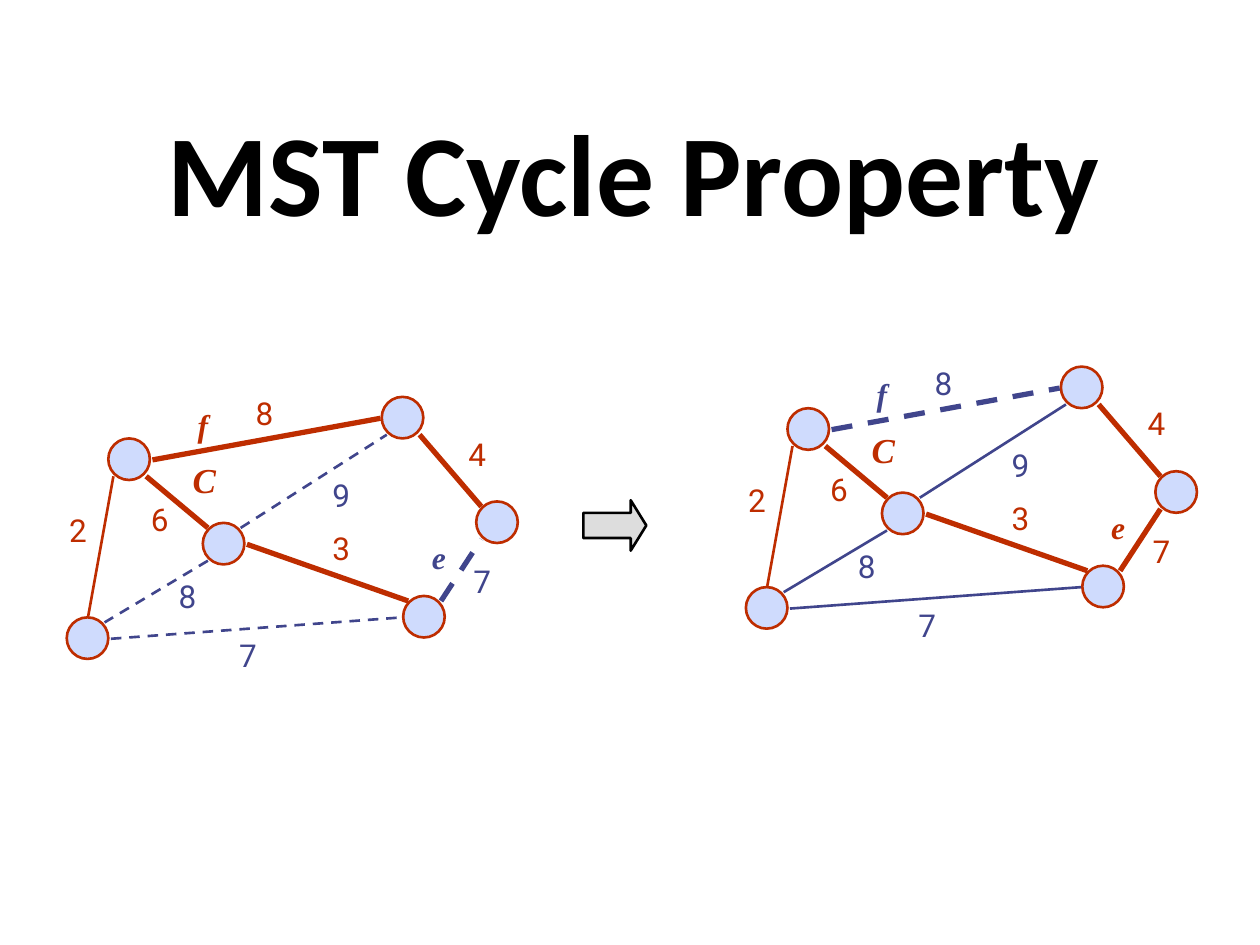
from dataclasses import dataclass

from lxml import etree
from pptx import Presentation
from pptx.dml.color import RGBColor
from pptx.enum.dml import MSO_LINE
from pptx.enum.shapes import MSO_CONNECTOR, MSO_SHAPE
from pptx.enum.text import MSO_ANCHOR, MSO_AUTO_SIZE, PP_ALIGN
from pptx.oxml.ns import qn
from pptx.shapes.group import GroupShape
from pptx.slide import Slide
from pptx.util import Emu, Pt

ELLIPSE, DOWN_ARROW = MSO_SHAPE.OVAL, MSO_SHAPE.DOWN_ARROW
STRAIGHT, DASH = MSO_CONNECTOR.STRAIGHT, MSO_LINE.DASH
MIDDLE, CENTER, FIT = MSO_ANCHOR.MIDDLE, PP_ALIGN.CENTER, MSO_AUTO_SIZE.SHAPE_TO_FIT_TEXT

EMU_PER_PX = 9144  # 100 px to the inch
COLORS = {
    "tree": "BE2D00",
    "other": "40458C",
    "vertex": "CFDBFD",
    "arrow": "DDDDDD",
    "black": "000000",
}
THIN, THICK = 1.5, 3
VERTEX_SIZE = 33
TITLE_LAYOUT = 5

# Edge ends lie just outside a vertex, measured from its centre
COMPASS = {
    "N": (0, -18), "E": (18, 0), "W": (-18, 0),
    "NE": (13, -13), "SE": (13, 13), "SW": (-13, 13), "NW": (-13, -13),
}

VERTICES = {
    "upper left": (86, 348),
    "upper right": (303, 315),
    "middle": (161, 415),
    "lower left": (53, 490),
    "far right": (378, 398),
    "lower right": (320, 473),
}


@dataclass(frozen=True)
class Edge:
    name: str
    start: str
    start_side: str
    end: str
    end_side: str
    width: float
    weight: str
    weight_left: int
    weight_top: int


@dataclass(frozen=True)
class Graph:
    dx: int
    dy: int
    tree: frozenset[str]
    dashed: frozenset[str]


@dataclass(frozen=True)
class Symbol:
    text: str
    edge: str  # edge whose colour it shares
    left: int
    top: int
    width: int
    height: int
    size: int


EDGES = [
    Edge("six", "upper left", "SE", "middle", "NW", THICK, "6", 110, 392),
    Edge("eight", "middle", "SW", "lower left", "NE", THIN, "8", 132, 453),
    Edge("two", "upper left", "SW", "lower left", "N", THIN, "2", 45, 401),
    Edge("three", "middle", "E", "lower right", "NW", THICK, "3", 254, 415),
    Edge("seven", "lower left", "E", "lower right", "W", THIN, "7", 180, 500),
    Edge("f", "upper left", "E", "upper right", "W", THICK, "8", 193, 308),
    Edge("nine", "middle", "NE", "upper right", "SW", THIN, "9", 254, 373),
    Edge("four", "far right", "NW", "upper right", "SE", THICK, "4", 362, 340),
    Edge("e", "lower right", "NE", "far right", "SW", THICK, "7", 366, 441),
]
SYMBOLS = [
    Symbol("e", "e", 333, 422, 31, 40, 18),
    Symbol("C", "six", 143, 359, 47, 43, 20),
    Symbol("f", "f", 147, 317, 33, 40, 18),
]

KEPT = frozenset({"two", "three", "four", "six"})
GRAPHS = [
    Graph(0, 0, KEPT | {"f"}, frozenset({"e", "seven", "eight", "nine"})),
    Graph(539, -24, KEPT | {"e"}, frozenset({"f"})),
]


def px(length: int) -> Emu:
    return Emu(length * EMU_PER_PX)


def rgb(name: str) -> RGBColor:
    return RGBColor.from_string(COLORS[name])


def edge_color(graph: Graph, edge_name: str) -> str:
    return "tree" if edge_name in graph.tree else "other"


def style_shape(shape, fill: str, line: str) -> None:
    shape.shadow.inherit = False
    shape.fill.solid()
    shape.fill.fore_color.rgb = rgb(fill)
    shape.line.color.rgb = rgb(line)
    shape.line.width = Pt(THIN)


def draw_vertices(group: GroupShape, graph: Graph) -> None:
    for left, top in VERTICES.values():
        vertex = group.shapes.add_shape(
            ELLIPSE, px(left + graph.dx), px(top + graph.dy), px(VERTEX_SIZE), px(VERTEX_SIZE))
        style_shape(vertex, "vertex", "tree")


def edge_end(graph: Graph, vertex: str, side: str) -> tuple[Emu, Emu]:
    left, top = VERTICES[vertex]
    reach_x, reach_y = COMPASS[side]
    half = (VERTEX_SIZE + 1) // 2
    return px(left + half + reach_x + graph.dx), px(top + half + reach_y + graph.dy)


def draw_edge(group: GroupShape, graph: Graph, edge: Edge) -> None:
    connector = group.shapes.add_connector(
        STRAIGHT,
        *edge_end(graph, edge.start, edge.start_side),
        *edge_end(graph, edge.end, edge.end_side))
    connector.line.color.rgb = rgb(edge_color(graph, edge.name))
    connector.line.width = Pt(edge.width)
    if edge.name in graph.dashed:
        connector.line.dash_style = DASH
    etree.SubElement(connector._element.spPr, qn("a:effectLst"))


def draw_label(group: GroupShape, graph: Graph, label: Symbol, font: str, emphasis: bool) -> None:
    box = group.shapes.add_textbox(
        px(label.left + graph.dx), px(label.top + graph.dy), px(label.width), px(label.height))
    frame = box.text_frame
    frame.word_wrap = False
    frame.auto_size = FIT
    run = frame.paragraphs[0].add_run()
    run.text = label.text
    run.font.name = font
    run.font.size = Pt(label.size)
    run.font.bold = run.font.italic = emphasis
    run.font.color.rgb = rgb(edge_color(graph, label.edge))


def draw_graph(slide: Slide, graph: Graph) -> None:
    group = slide.shapes.add_group_shape()
    draw_vertices(group, graph)
    for edge in EDGES:
        draw_edge(group, graph, edge)
    for edge in EDGES:
        weight = Symbol(edge.weight, edge.name, edge.weight_left, edge.weight_top, 34, 40, 18)
        draw_label(group, graph, weight, "Roboto", False)
    for symbol in SYMBOLS:
        draw_label(group, graph, symbol, "Times New Roman", True)


def draw_title(slide: Slide) -> None:
    title = slide.shapes.title
    title.left, title.top, title.width, title.height = px(53), px(73), px(900), px(125)
    title.text_frame.vertical_anchor = MIDDLE
    paragraph = title.text_frame.paragraphs[0]
    paragraph.alignment = CENTER
    run = paragraph.add_run()
    run.text = "MST Cycle Property"
    run.font.name = "Calibri"
    run.font.size = Pt(66)
    run.font.bold = True
    run.font.color.rgb = rgb("black")


def draw_arrow(slide: Slide) -> None:
    arrow = slide.shapes.add_shape(DOWN_ARROW, px(468), px(392), px(40), px(50))
    arrow.rotation = 270
    arrow.adjustments[0] = 0.5
    arrow.adjustments[1] = 0.31
    style_shape(arrow, "arrow", "black")


def main() -> None:
    presentation = Presentation()
    presentation.slide_width, presentation.slide_height = px(1000), px(750)
    slide = presentation.slides.add_slide(presentation.slide_layouts[TITLE_LAYOUT])
    draw_title(slide)
    for graph in GRAPHS:
        draw_graph(slide, graph)
    draw_arrow(slide)
    presentation.save("out.pptx")


if __name__ == "__main__":
    main()
